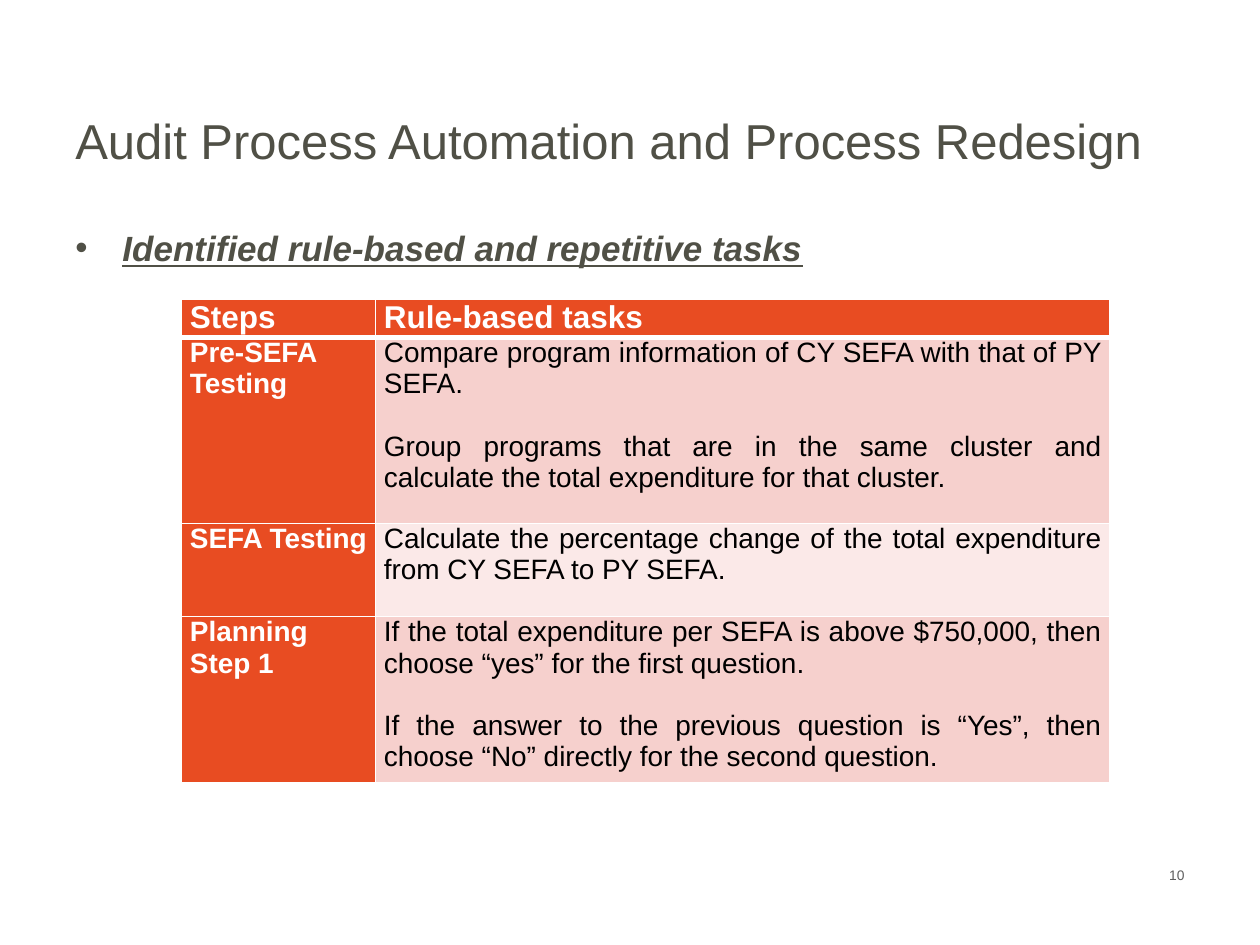
from lxml.etree import SubElement
from pptx import Presentation
from pptx.dml.color import RGBColor as Color
from pptx.enum.text import MSO_ANCHOR as Anchor, PP_ALIGN as Align
from pptx.oxml.ns import qn
from pptx.util import Cm, Pt

TITLE = "Audit Process Automation and Process Redesign"
SUBTITLE = "Identified rule-based and repetitive tasks"
PAGE_NUMBER = "10"
HEADER = ("Steps", "Rule-based tasks")
TASKS = [
    ("Pre-SEFA Testing", [
        "Compare program information of CY SEFA with that of PY SEFA.",
        "Group programs that are in the same cluster and calculate the total expenditure for that cluster.",
    ]),
    ("SEFA Testing", [
        "Calculate the percentage change of the total expenditure from CY SEFA to PY SEFA.",
    ]),
    ("Planning Step 1", [
        "If the total expenditure per SEFA is above $750,000, then choose “yes” for the first question.",
        "If the answer to the previous question is “Yes”, then choose “No” directly for the second question.",
    ]),
]
COLUMN_WIDTHS = (3.91, 14.81)
ROW_HEIGHTS = (0.69, 3.75, 1.88, 3.12)

THEME = {
    "font": "Arial",
    "text": "505046", "muted": "5F5F5F", "white": "FFFFFF", "black": "000000",
    "accent": "E84C22", "bands": ("F6D0CD", "FBE9E8"),
    "title": 28, "subtitle": 20, "header": 18, "body": 16, "number": 7.9,
    "rule": 1, "header_rule": 3,
}


def style_font(font, size, color, **formats):
    """Apply the theme font, a theme size and colour, and extra formats."""
    values = {"name": THEME["font"], "size": Pt(THEME[size]), "bold": False, **formats}
    for name, value in values.items():
        setattr(font, name, value)
    font.color.rgb = Color.from_string(THEME[color])


def add_text(slide, box, text, size, color, frame_formats=None, align=Align.LEFT, **formats):
    """Add a one-paragraph text box and return its paragraph."""
    frame = slide.shapes.add_textbox(*map(Cm, box)).text_frame
    for name, value in {"word_wrap": True, **(frame_formats or {})}.items():
        setattr(frame, name, value)
    paragraph = frame.paragraphs[0]
    paragraph.alignment = align
    run = paragraph.add_run()
    run.text = text
    style_font(run.font, size, color, **formats)
    return paragraph


def add_bullet(paragraph, indent):
    """Give a paragraph a round bullet with a hanging indent."""
    properties = paragraph._p.get_or_add_pPr()
    properties.set("marL", str(indent))
    properties.set("indent", str(-indent))
    color = SubElement(SubElement(properties, qn("a:buClr")), qn("a:srgbClr"))
    color.set("val", THEME["text"])
    SubElement(properties, qn("a:buFont")).set("typeface", THEME["font"])
    SubElement(properties, qn("a:buChar")).set("char", "•")


def add_borders(cell, top, bottom):
    """Draw white borders around a cell."""
    properties = cell._tc.get_or_add_tcPr()
    for side, width in {"L": "rule", "R": "rule", "T": top, "B": bottom}.items():
        line = SubElement(properties, qn(f"a:ln{side}"), w=str(Pt(THEME[width])))
        fill = SubElement(line, qn("a:solidFill"))
        SubElement(fill, qn("a:srgbClr"), val=THEME["white"])


def fill_cell(cell, texts, row, is_label):
    """Write and style one table cell."""
    margins = {"margin_left": 0.17, "margin_right": 0.17, "margin_top": 0, "margin_bottom": 0}
    for name, value in margins.items():
        setattr(cell, name, Cm(value))
    add_borders(cell, "header_rule" if row == 1 else "rule", "header_rule" if row == 0 else "rule")
    background = THEME["accent"] if is_label else THEME["bands"][(row - 1) % 2]
    cell.fill.solid()
    cell.fill.fore_color.rgb = Color.from_string(background)
    size = "body" if row else "header"
    for index, text in enumerate(texts):
        paragraph = cell.text_frame.paragraphs[0] if index == 0 else cell.text_frame.add_paragraph()
        paragraph.alignment = Align.JUSTIFY
        if index:
            paragraph.space_before = Pt(18)
        run = paragraph.add_run()
        run.text = text
        style_font(run.font, size, "white" if is_label else "black", bold=is_label)


def add_task_table(slide):
    """Add the table of steps and their rule-based tasks."""
    rows = [[[text] for text in HEADER]] + [[[step], tasks] for step, tasks in TASKS]
    box = (3.66, 6.04, sum(COLUMN_WIDTHS), sum(ROW_HEIGHTS))
    table = slide.shapes.add_table(len(rows), len(HEADER), *map(Cm, box)).table
    for column, width in zip(table.columns, COLUMN_WIDTHS):
        column.width = Cm(width)
    for row, height in zip(table.rows, ROW_HEIGHTS):
        row.height = Cm(height)
    for row, cells in enumerate(rows):
        for column, texts in enumerate(cells):
            fill_cell(table.cell(row, column), texts, row, row == 0 or column == 0)


def main():
    """Build the slide and save it."""
    presentation = Presentation()
    presentation.slide_width, presentation.slide_height = Cm(25.4), Cm(19.05)
    slide = presentation.slides.add_slide(presentation.slide_layouts[6])
    add_text(slide, (1.27, 1.7, 22.86, 2.24), TITLE, "title", "text",
             {"vertical_anchor": Anchor.MIDDLE})
    add_task_table(slide)
    add_text(slide, (18.21, 17.35, 5.92, 1.32), PAGE_NUMBER, "number", "muted", align=Align.RIGHT)
    subtitle = add_text(slide, (1.27, 4.45, 15.27, 1.12), SUBTITLE, "subtitle", "text",
                        {"word_wrap": False}, bold=True, italic=True, underline=True)
    add_bullet(subtitle, Cm(0.95))
    presentation.save("out.pptx")


if __name__ == "__main__":
    main()
